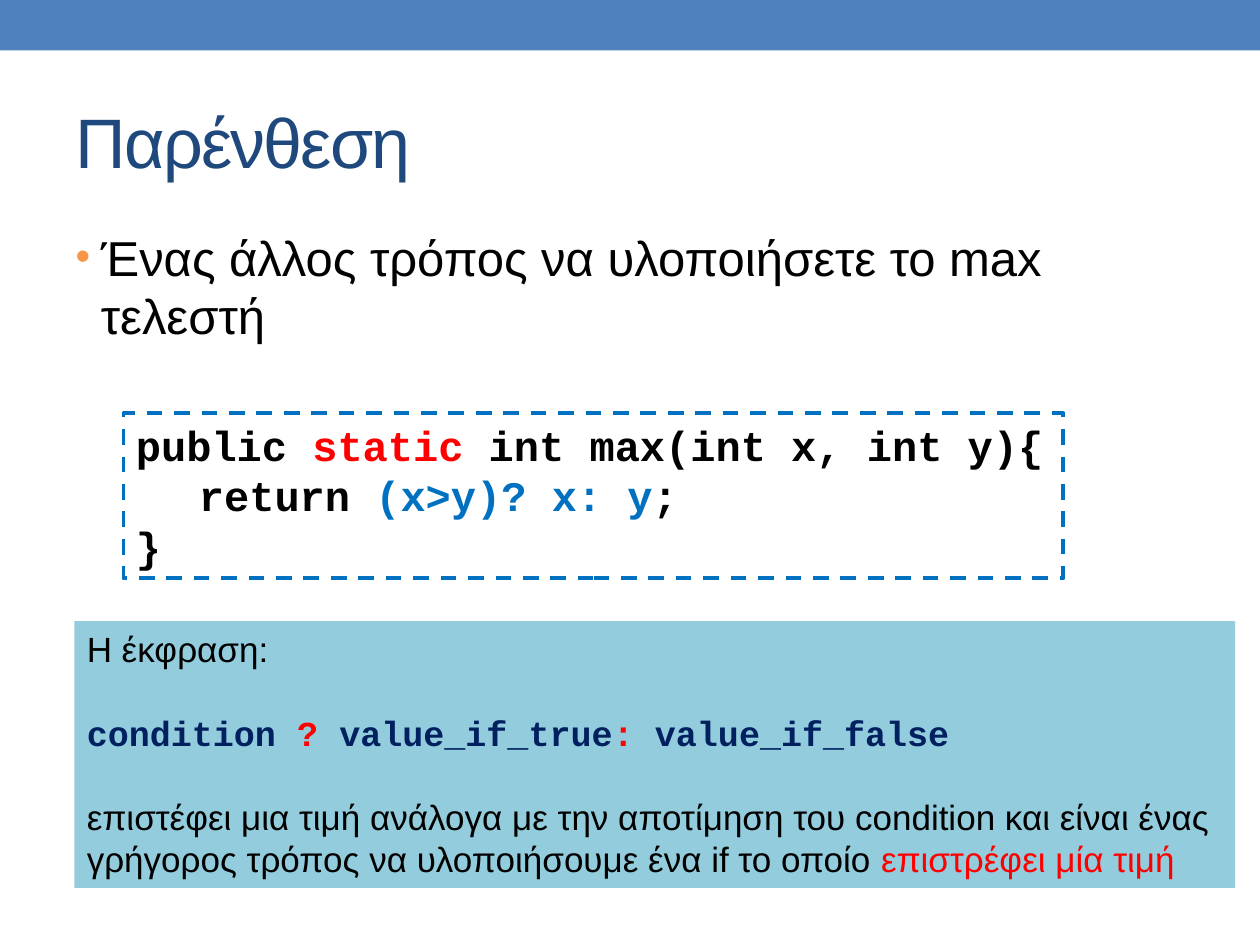
from dataclasses import dataclass
from typing import Optional

from lxml.etree import SubElement as Sub
from pptx import Presentation
from pptx.dml.color import RGBColor
from pptx.enum.dml import MSO_LINE_DASH_STYLE as Dash
from pptx.enum.shapes import MSO_SHAPE as Shape
from pptx.enum.text import MSO_ANCHOR as Anchor, MSO_AUTO_SIZE as Auto, PP_ALIGN as Align
from pptx.oxml.ns import qn
from pptx.util import Cm, Pt

BLACK, RED, BLUE, NAVY = "000000", "FF0000", "0070C0", "002060"
SANS, MONO = "Arial", "Courier New"


@dataclass
class Line:
    runs: list[tuple[str, str]]  # text and colour
    font: str
    size: float
    bold: bool = False
    gap: float = 0


@dataclass
class Panel:
    left: float
    top: float
    width: float
    height: float
    lines: list[Line]
    wrap: bool = True
    fill: Optional[str] = None
    edge: Optional[str] = None


def tint(code: str) -> RGBColor:
    return RGBColor.from_string(code)


def place(shape, left: float, top: float, width: float, height: float) -> None:
    shape.left, shape.top = Cm(left), Cm(top)
    shape.width, shape.height = Cm(width), Cm(height)


def write(para, line: Line) -> None:
    font = para.font
    font.name, font.size, font.bold = line.font, Pt(line.size), line.bold
    para.space_before = Pt(line.gap)
    for text, color in line.runs:
        run = para.add_run()
        run.text = text
        run.font.color.rgb = tint(color)


def add_bullet(para, char: str, color: str, size: int, hang: Cm) -> None:
    props = para._p.get_or_add_pPr()
    props.set("marL", str(hang))
    props.set("indent", str(-hang))
    Sub(Sub(props, qn("a:buClr")), qn("a:srgbClr"), val=color)
    Sub(props, qn("a:buSzPct"), val=str(size * 1000))
    Sub(props, qn("a:buFont"), typeface=SANS)
    Sub(props, qn("a:buChar"), char=char)


def draw(slide, panel: Panel) -> None:
    box = slide.shapes.add_textbox(0, 0, 0, 0)
    place(box, panel.left, panel.top, panel.width, panel.height)
    if panel.fill:
        box.fill.solid()
        box.fill.fore_color.rgb = tint(panel.fill)
    if panel.edge:
        box.line.color.rgb = tint(panel.edge)
        box.line.width = Pt(2.25)
        box.line.dash_style = Dash.DASH
    frame = box.text_frame
    frame.word_wrap, frame.auto_size = panel.wrap, Auto.SHAPE_TO_FIT_TEXT
    for i, line in enumerate(panel.lines):
        write(frame.add_paragraph() if i else frame.paragraphs[0], line)


CODE = Panel(2.49, 8.33, 18.95, 3.33, [
    Line([("public ", BLACK), ("static", RED), (" int max(int x, int y){", BLACK)],
         MONO, 24, True),
    Line([("\treturn ", BLACK), ("(x>y)? x: y", BLUE), (";", BLACK)], MONO, 24, True),
    Line([("}", BLACK)], MONO, 24, True),
], wrap=False, edge=BLUE)

NOTE = Panel(1.5, 12.52, 23.4, 5.38, [
    Line([("H έκφραση:", BLACK)], SANS, 20),
    Line([("condition", NAVY), (" ? ", RED), ("value_if_true", NAVY), (": ", RED),
          ("value_if_false", NAVY)], MONO, 20, True, 24),
    Line([("επιστέφει μια τιμή ανάλογα με την αποτίμηση του condition και είναι ένας "
           "γρήγορος τρόπος να υλοποιήσουμε ένα if το οποίο ", BLACK),
          ("επιστρέφει μία τιμή", RED)], SANS, 20, gap=24),
], fill="93CDDD")


def main() -> None:
    deck = Presentation()
    deck.slide_width, deck.slide_height = Cm(25.4), Cm(19.05)
    slide = deck.slides.add_slide(deck.slide_layouts[1])

    # Top band
    band = slide.shapes.add_shape(Shape.RECTANGLE, 0, 0, deck.slide_width, Cm(1.02))
    band.shadow.inherit = False
    band.fill.solid()
    band.fill.fore_color.rgb = tint("4F81BD")
    band.line.fill.background()

    # Title
    title = slide.shapes.title
    place(title, 1.27, 1.47, 22.86, 2.74)
    title.text_frame.vertical_anchor = Anchor.MIDDLE
    head = title.text_frame.paragraphs[0]
    head.alignment = Align.LEFT
    write(head, Line([("Παρένθεση", "1F497D")], SANS, 40))
    head.runs[0].font._element.set("spc", "-100")

    # Bullet list
    body = slide.placeholders[1]
    place(body, 1.27, 4.45, 22.86, 13.54)
    item = body.text_frame.paragraphs[0]
    add_bullet(item, "•", "F79646", 85, Cm(0.51))
    write(item, Line([("Ένας άλλος τρόπος να υλοποιήσετε το max τελεστή", BLACK)],
                     SANS, 28, gap=5.6))

    # Code and explanation
    for panel in (CODE, NOTE):
        draw(slide, panel)

    deck.save("out.pptx")


if __name__ == "__main__":
    main()
